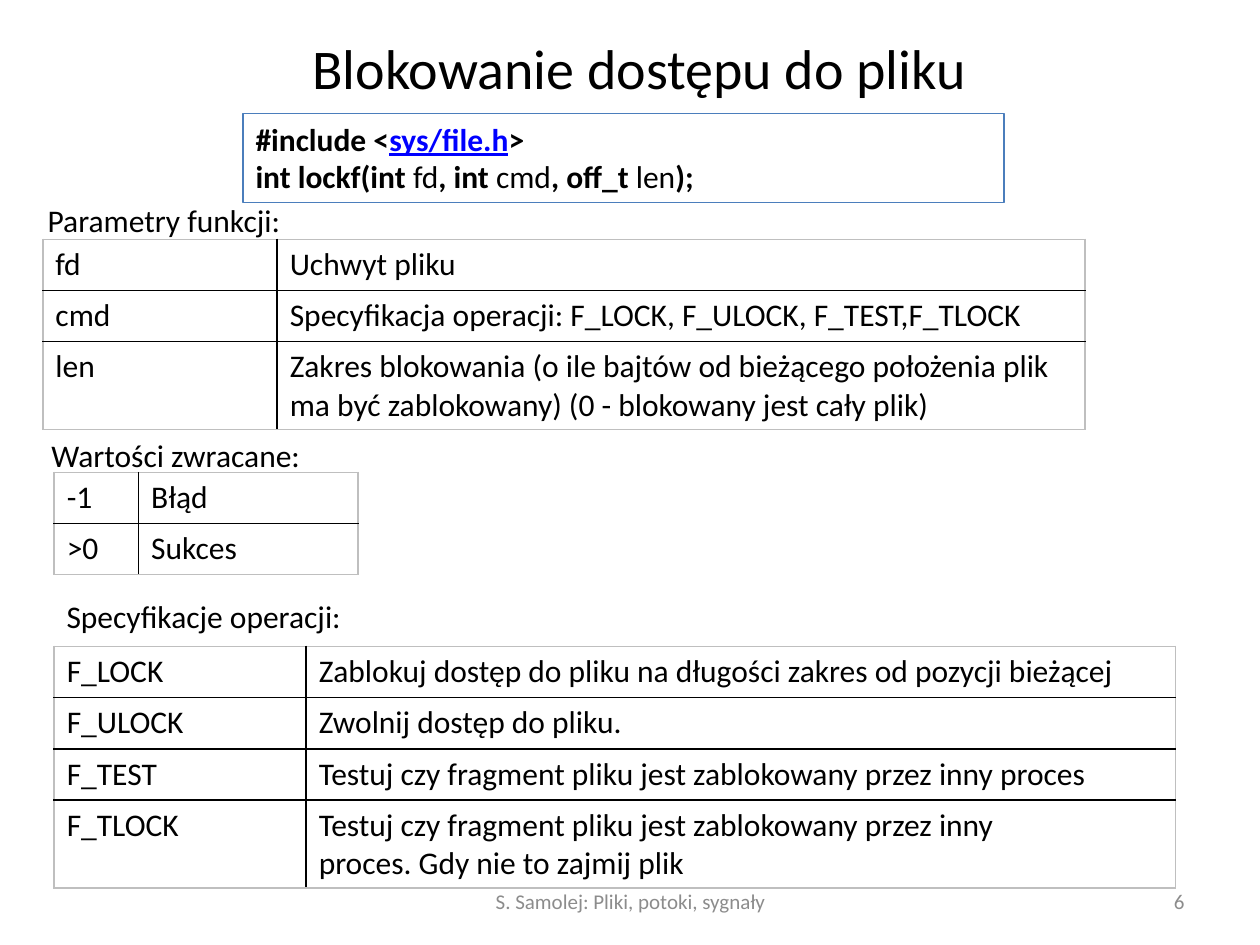
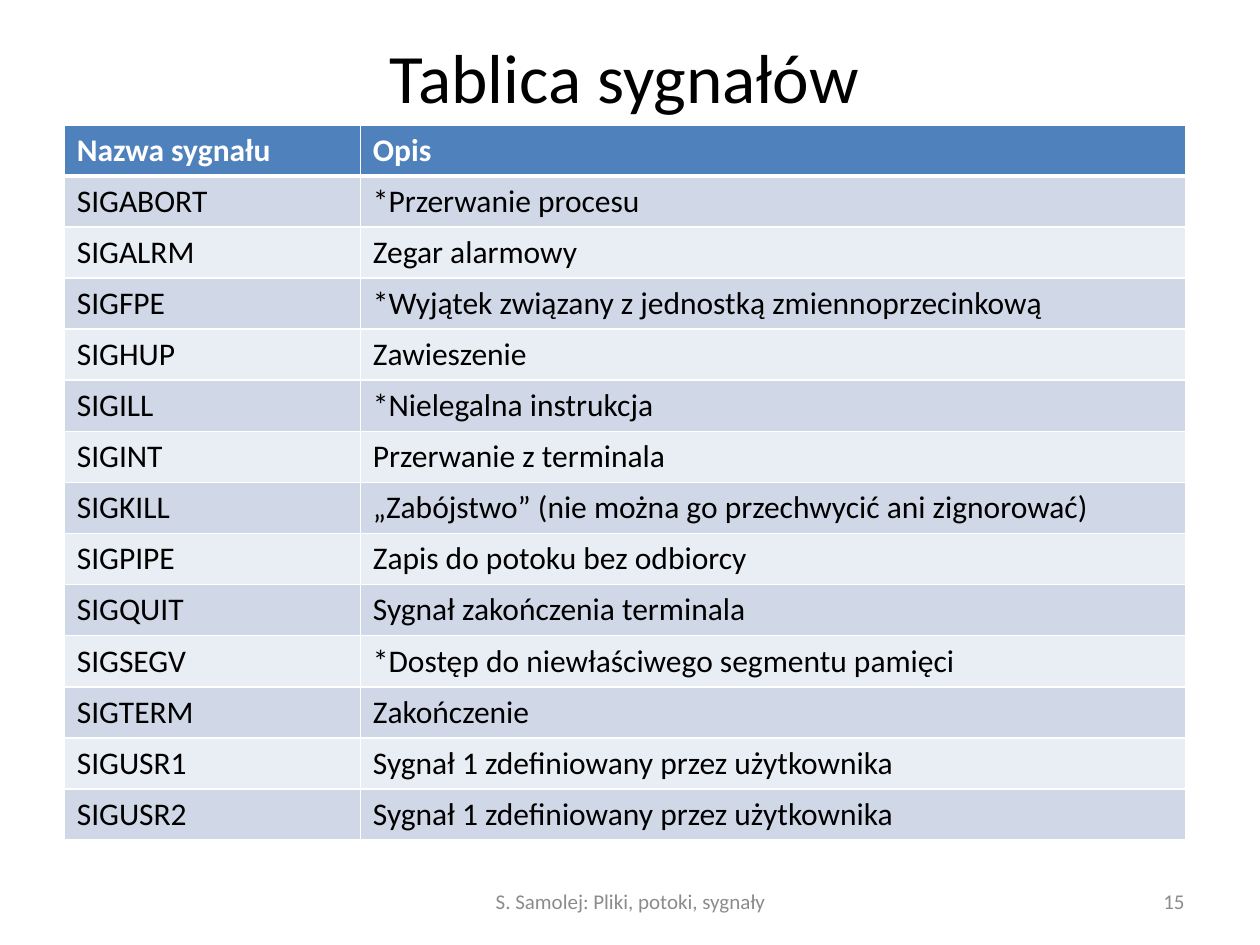
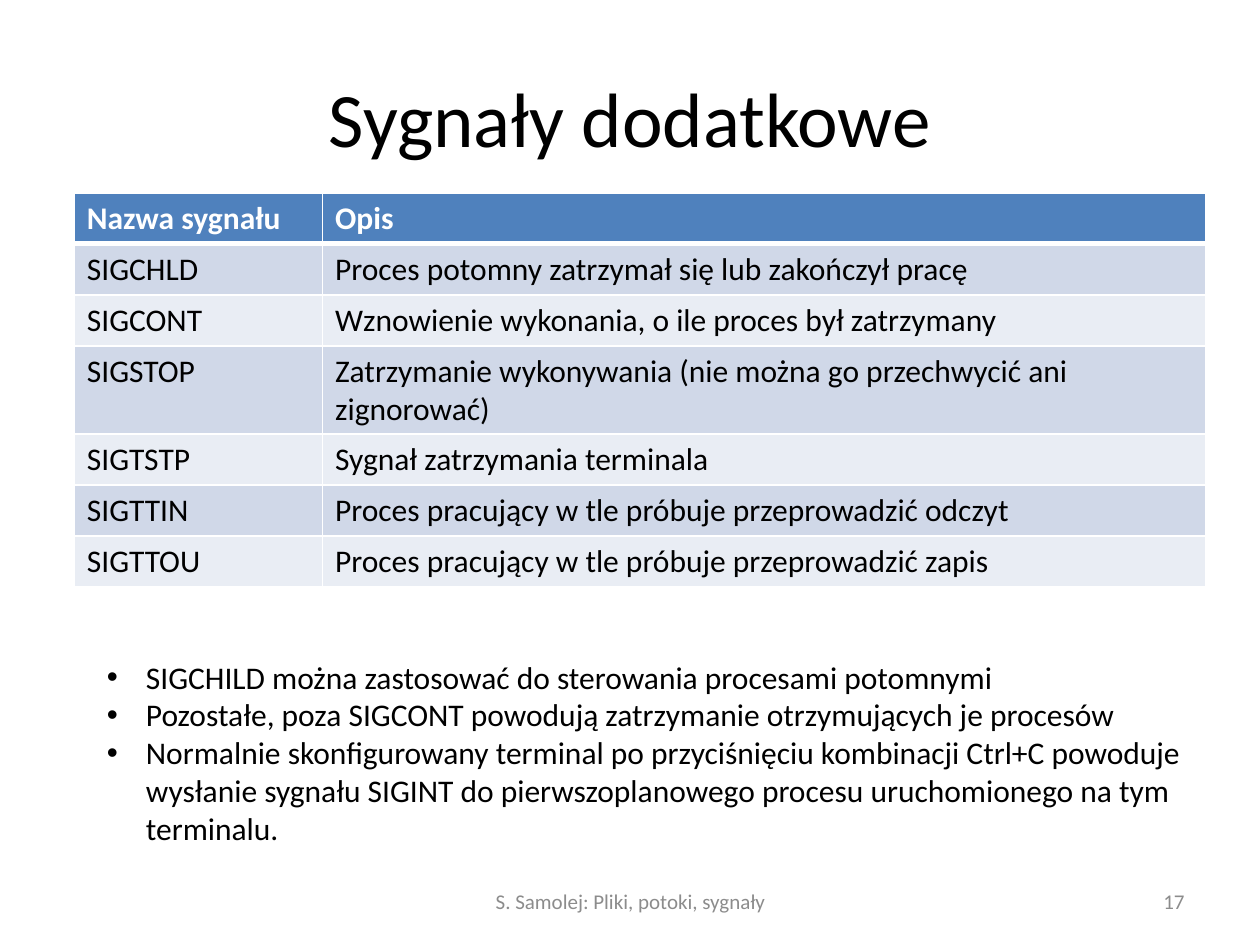
from lxml import etree
from pptx import Presentation
from pptx import util as u
from pptx.dml.color import RGBColor
from pptx.enum import shapes, text
from pptx.oxml import ns

rgb = RGBColor.from_string
BLACK, WHITE, GREY, LINK = "000000", "FFFFFF", "8C8C8C", "0000FF"
HEADER, BAND_DARK, BAND_LIGHT, OUTER = "4F81BD", "D0D8E8", "E9EDF4", "BFBFBF"
LEFT, CENTER, RIGHT = text.PP_ALIGN.LEFT, text.PP_ALIGN.CENTER, text.PP_ALIGN.RIGHT
TOP, MIDDLE = text.MSO_ANCHOR.TOP, text.MSO_ANCHOR.MIDDLE


def write(frame, lines, size=18, color=BLACK, bold=False, align=LEFT, anchor=TOP, bullet=None):
    frame.word_wrap = True
    frame.vertical_anchor = anchor
    for number, line in enumerate(lines):
        paragraph = frame.paragraphs[0] if number == 0 else frame.add_paragraph()
        paragraph.alignment = align
        if bullet:
            properties = paragraph._p.get_or_add_pPr()
            properties.set("marL", str(u.Inches(0.31)))
            properties.set("indent", str(-u.Inches(0.31)))
            font = etree.SubElement(properties, ns.qn("a:buFont"))
            font.set("typeface", "Arial")
            etree.SubElement(properties, ns.qn("a:buChar")).set("char", bullet)
        pieces = [(line, {})] if isinstance(line, str) else line
        for words, style in pieces:
            run = paragraph.add_run()
            run.text = words
            run.font.name = "Calibri"
            run.font.size = u.Pt(size)
            run.font.bold = style.get("bold", bold)
            run.font.underline = style.get("underline", False)
            run.font.color.rgb = rgb(style.get("color", color))


def add_grid(slide, rows, left, top, widths, height, tall=None, banded=False):
    count = len(rows)
    grid = slide.shapes.add_table(count, 2, u.Inches(left), u.Inches(top),
                                  u.Inches(sum(widths)), u.Inches(height)).table
    grid.first_row = banded
    grid.horz_banding = banded
    for column, width in zip(grid.columns, widths):
        column.width = u.Inches(width)
    short = height / count if tall is None else (height - 0.7) / (count - 1)
    for r, row in enumerate(rows):
        grid.rows[r].height = u.Inches(0.7 if r == tall else short)
        header = banded and r == 0
        for c, words in enumerate(row):
            cell = grid.cell(r, c)
            write(cell.text_frame, words.split("\n"), bold=header,
                  color=WHITE if header else BLACK)
            if banded:
                cell.fill.solid()
                cell.fill.fore_color.rgb = rgb(
                    HEADER if header else BAND_DARK if r % 2 else BAND_LIGHT)
            else:
                cell.fill.background()
            edges = {"L": c == 0, "R": c == 1, "T": r == 0, "B": r == count - 1}
            for place, (side, outside) in enumerate(edges.items()):
                under_header = banded and (r, side) in ((0, "B"), (1, "T"))
                border = etree.Element(ns.qn("a:ln" + side))
                border.set("w", str(u.Pt(3 if under_header else 1)))
                fill = etree.SubElement(border, ns.qn("a:solidFill"))
                etree.SubElement(fill, ns.qn("a:srgbClr")).set(
                    "val", WHITE if banded else OUTER if outside else BLACK)
                cell._tc.get_or_add_tcPr().insert(place, border)


deck = Presentation()
deck.slide_width, deck.slide_height = u.Inches(10), u.Inches(7.5)

slides = []
for title, size, width, height, page in [
    ("Blokowanie dostępu do pliku", 32, 9.15, 0.46, "6"),
    ("Tablica sygnałów", 39.6, 8.91, 0.61, "15"),
    ("Sygnały dodatkowe", 44, 9, 1.25, "17"),
]:
    slide = deck.slides.add_slide(deck.slide_layouts[6])
    slides.append(slide)
    for words, box, points, color, align in [
        (title, (0.5, 0.3, width, height), size, BLACK, CENTER),
        ("S. Samolej: Pliki, potoki, sygnały", (3.42, 6.95, 3.17, 0.4), 12, GREY, CENTER),
        (page, (7.17, 6.95, 2.33, 0.4), 12, GREY, RIGHT),
    ]:
        frame = slide.shapes.add_textbox(*map(u.Inches, box)).text_frame
        write(frame, [words], size=points, color=color, align=align, anchor=MIDDLE)

locking, signals, extra_signals = slides

declaration = locking.shapes.add_shape(
    shapes.MSO_SHAPE.RECTANGLE, u.Inches(1.93), u.Inches(0.9), u.Inches(6.04), u.Inches(0.71))
declaration.shadow.inherit = False
declaration.fill.background()
declaration.line.color.rgb = rgb("4B7EBC")
declaration.line.width = u.Pt(0.75)
plain = {"bold": False}
write(declaration.text_frame, [
    [("#include <", {}), ("sys/file.h", {"color": LINK, "underline": True}), (">", {})],
    [("int lockf(int ", {}), ("fd", plain), (", int ", {}), ("cmd", plain),
     (", off_t ", {}), ("len", plain), (");", {})],
], bold=True)

for caption, left, top, width in [
    ("Parametry funkcji:", 0.28, 1.55, 2.28),
    ("Wartości zwracane:", 0.31, 3.41, 2.28),
    ("Specyfikacje operacji:", 0.43, 4.69, 2.44),
]:
    label = locking.shapes.add_textbox(
        u.Inches(left), u.Inches(top), u.Inches(width), u.Inches(0.4))
    write(label.text_frame, [caption])

parameters = [
    ("fd", "Uchwyt pliku"),
    ("cmd", "Specyfikacja operacji: F_LOCK, F_ULOCK, F_TEST,F_TLOCK"),
    ("len", "Zakres blokowania (o ile bajtów od bieżącego położenia plik "
            "ma być zablokowany) (0 - blokowany jest cały plik)"),
]
add_grid(locking, parameters, 0.34, 1.9, (1.86, 6.41), 1.51, tall=2)

return_values = [("-1", "Błąd"), (">0", "Sukces")]
add_grid(locking, return_values, 0.43, 3.75, (0.67, 1.74), 0.81)

operations = [
    ("F_LOCK", "Zablokuj dostęp do pliku na długości zakres od pozycji bieżącej"),
    ("F_ULOCK", "Zwolnij dostęp do pliku."),
    ("F_TEST", "Testuj czy fragment pliku jest zablokowany przez inny proces"),
    ("F_TLOCK", "Testuj czy fragment pliku jest zablokowany przez inny\n"
                "proces. Gdy nie to zajmij plik"),
]
add_grid(locking, operations, 0.43, 5.13, (2, 6.9), 1.92, tall=3)

signal_header = ("Nazwa sygnału", "Opis")
basic_rows = [
    signal_header,
    ("SIGABORT", "*Przerwanie procesu"),
    ("SIGALRM", "Zegar alarmowy"),
    ("SIGFPE", "*Wyjątek związany z jednostką zmiennoprzecinkową"),
    ("SIGHUP", "Zawieszenie"),
    ("SIGILL", "*Nielegalna instrukcja"),
    ("SIGINT", "Przerwanie z terminala"),
    ("SIGKILL", "„Zabójstwo” (nie można go przechwycić ani zignorować)"),
    ("SIGPIPE", "Zapis do potoku bez odbiorcy"),
    ("SIGQUIT", "Sygnał zakończenia terminala"),
    ("SIGSEGV", "*Dostęp do niewłaściwego segmentu pamięci"),
    ("SIGTERM", "Zakończenie"),
    ("SIGUSR1", "Sygnał 1 zdefiniowany przez użytkownika"),
    ("SIGUSR2", "Sygnał 1 zdefiniowany przez użytkownika"),
]
add_grid(signals, basic_rows, 0.51, 0.99, (2.35, 6.55), 5.68, banded=True)

extra_rows = [
    signal_header,
    ("SIGCHLD", "Proces potomny zatrzymał się lub zakończył pracę"),
    ("SIGCONT", "Wznowienie wykonania, o ile proces był zatrzymany"),
    ("SIGSTOP", "Zatrzymanie wykonywania (nie można go przechwycić ani zignorować)"),
    ("SIGTSTP", "Sygnał zatrzymania terminala"),
    ("SIGTTIN", "Proces pracujący w tle próbuje przeprowadzić odczyt"),
    ("SIGTTOU", "Proces pracujący w tle próbuje przeprowadzić zapis"),
]
add_grid(extra_signals, extra_rows, 0.59, 1.53, (1.97, 7.01), 3.13, tall=3, banded=True)

remarks = extra_signals.shapes.add_textbox(
    u.Inches(0.75), u.Inches(5.17), u.Inches(8.98), u.Inches(1.62))
write(remarks.text_frame, [
    "SIGCHILD można zastosować do sterowania procesami potomnymi",
    "Pozostałe, poza SIGCONT powodują zatrzymanie otrzymujących je procesów",
    "Normalnie skonfigurowany terminal po przyciśnięciu kombinacji Ctrl+C powoduje "
    "wysłanie sygnału SIGINT do pierwszoplanowego procesu uruchomionego na tym terminalu.",
], bullet="•")

deck.save("out.pptx")
